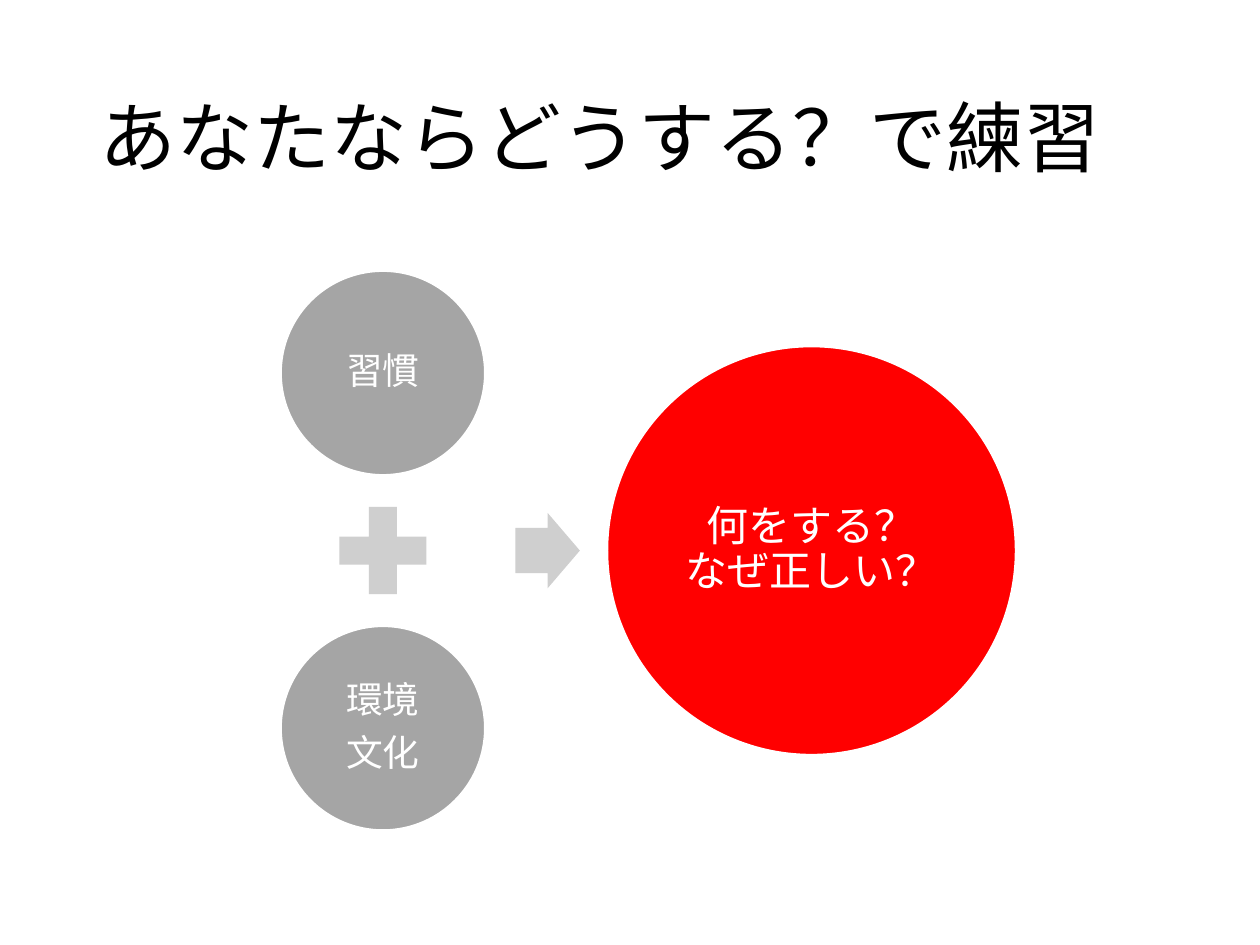
from pptx import Presentation
from pptx.dml.color import RGBColor
from pptx.enum.shapes import MSO_SHAPE as Shape
from pptx.enum.text import MSO_ANCHOR as Anchor, PP_ALIGN as Align
from pptx.util import Cm, Pt

BLACK = RGBColor(0x00, 0x00, 0x00)
WHITE = RGBColor(0xFF, 0xFF, 0xFF)
GRAY = RGBColor(0xA5, 0xA5, 0xA5)
LIGHT_GRAY = RGBColor(0xCF, 0xCF, 0xCF)
RED = RGBColor(0xFF, 0x00, 0x00)

FACTOR_X, ARROW_X, RESULT_X = 7.72, 11.04, 16.36
MIDDLE_Y, FACTOR_OFFSET = 11.1, 3.58


class PageBuilder:
    font_name = "Calibri"
    line_spacing = 0.9
    inset = Cm(0.07)

    def __init__(self, page):
        self.page = page

    def fill_text(self, frame, lines, size, color, align, gap=0):
        frame.word_wrap = True
        frame.vertical_anchor = Anchor.MIDDLE
        for index, line in enumerate(lines):
            para = frame.add_paragraph() if index else frame.paragraphs[0]
            para.text = line
            para.alignment = align
            para.line_spacing = self.line_spacing
            para.space_after = Pt(gap)
            para.font.name = self.font_name
            para.font.size = Pt(size)
            para.font.color.rgb = color

    def title(self, text, left, top, width, height):
        box = self.page.shapes.add_textbox(Cm(left), Cm(top), Cm(width), Cm(height))
        self.fill_text(box.text_frame, [text], 44, BLACK, Align.LEFT)

    def symbol(self, kind, center_x, center_y, width, height, color):
        shape = self.page.shapes.add_shape(
            kind, Cm(center_x - width / 2), Cm(center_y - height / 2), Cm(width), Cm(height)
        )
        shape.shadow.inherit = False
        shape.fill.solid()
        shape.fill.fore_color.rgb = color
        shape.line.fill.background()
        return shape

    def circle(self, lines, center_x, center_y, diameter, color, size):
        shape = self.symbol(Shape.OVAL, center_x, center_y, diameter, diameter, color)
        shape.line.color.rgb = WHITE
        shape.line.width = Pt(1)
        frame = shape.text_frame
        frame.margin_left = frame.margin_right = self.inset
        frame.margin_top = frame.margin_bottom = self.inset
        self.fill_text(frame, lines, size, WHITE, Align.CENTER, gap=8)


def main():
    deck = Presentation()
    deck.slide_width, deck.slide_height = Cm(25.4), Cm(19.05)
    builder = PageBuilder(deck.slides.add_slide(deck.slide_layouts[6]))

    builder.title("あなたならどうする？で練習", 1.75, 1.02, 21.9, 3.68)
    for lines, side in ((["習慣"], -1), (["環境", "文化"], 1)):
        builder.circle(lines, FACTOR_X, MIDDLE_Y + side * FACTOR_OFFSET, 4.11, GRAY, 21)
    builder.symbol(Shape.MATH_PLUS, FACTOR_X, MIDDLE_Y, 2.39, 2.39, LIGHT_GRAY)
    arrow = builder.symbol(Shape.RIGHT_ARROW, ARROW_X, MIDDLE_Y, 1.3, 1.52, LIGHT_GRAY)
    arrow.adjustments[0] = 0.6
    builder.circle(["何をする？\vなぜ正しい？"], RESULT_X, MIDDLE_Y, 8.23, RED, 24)

    deck.save("out.pptx")


if __name__ == "__main__":
    main()
